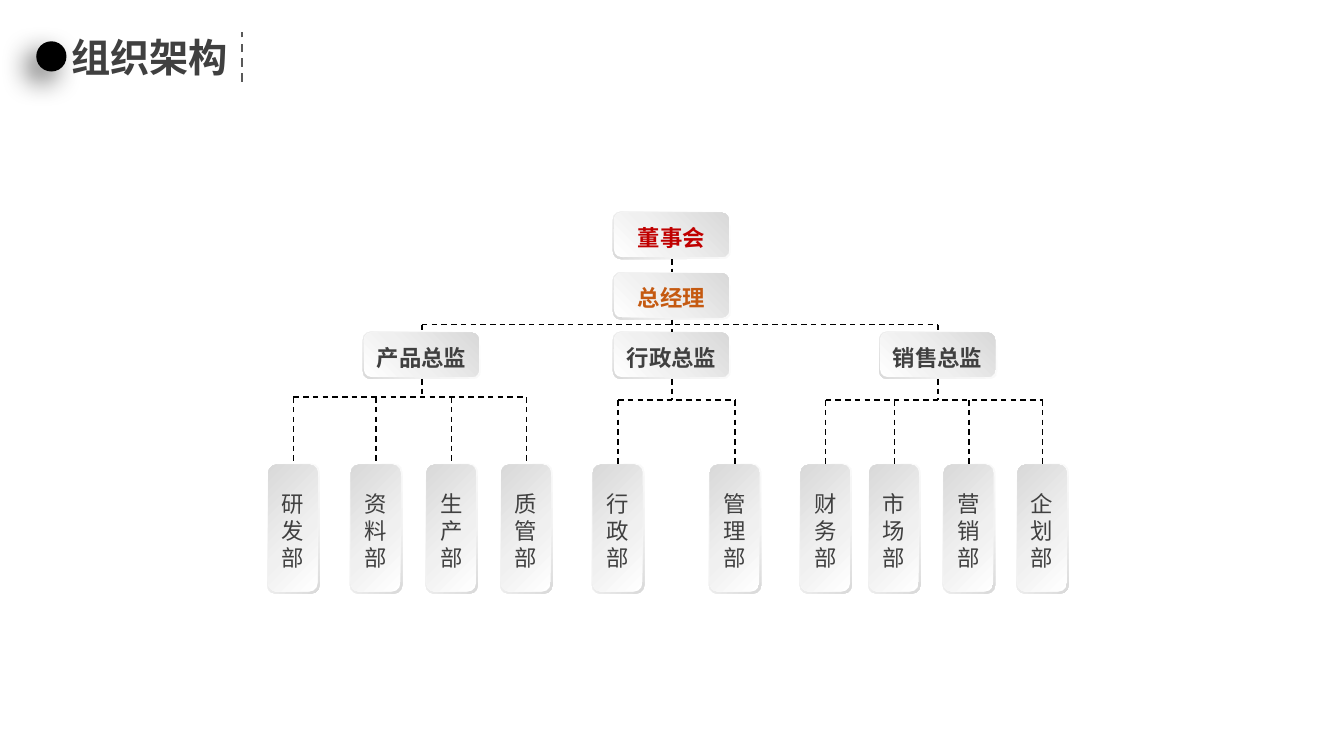
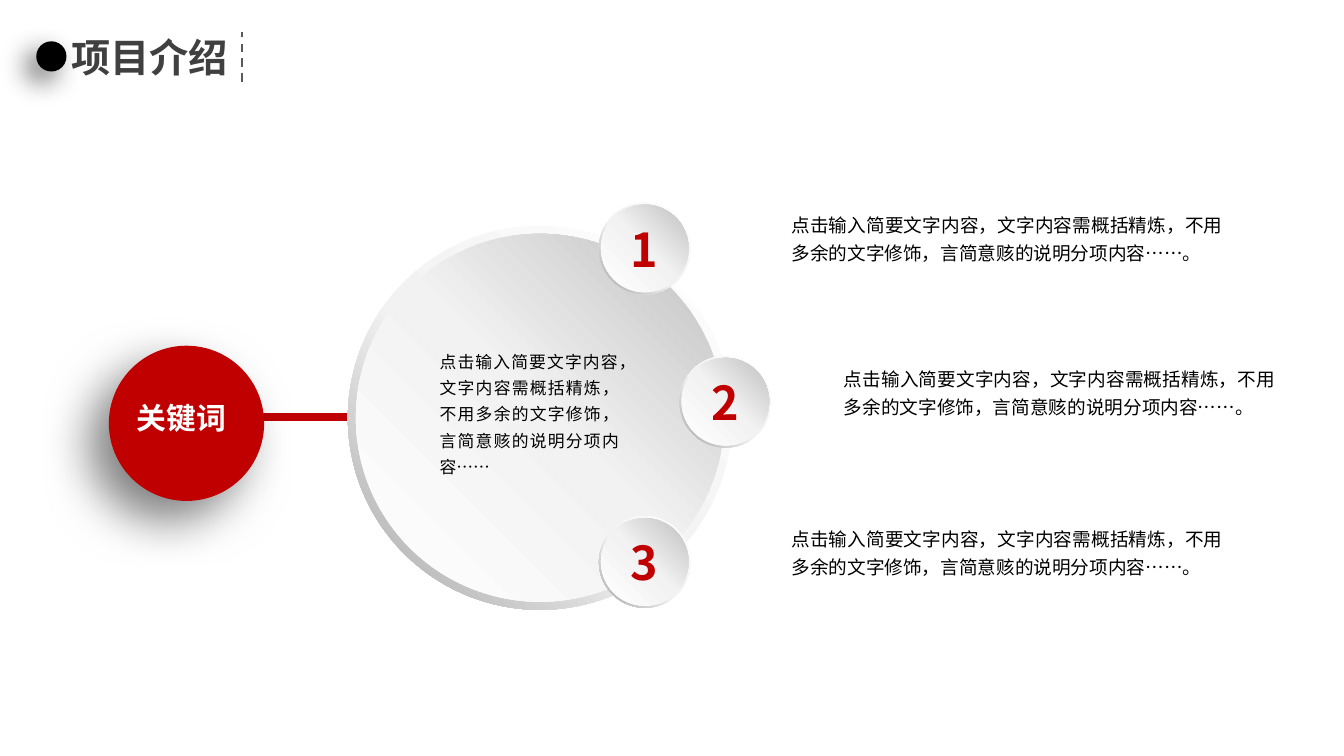
from lxml.etree import SubElement
from pptx import Presentation
from pptx.dml.color import RGBColor
from pptx.enum.dml import MSO_LINE
from pptx.enum.shapes import MSO_CONNECTOR, MSO_SHAPE
from pptx.enum.text import MSO_ANCHOR, PP_ALIGN
from pptx.oxml.ns import qn
from pptx.util import Inches, Pt

FONT = "Noto Sans CJK SC"
RED, ORANGE, DARK, GREY = "C00000", "C55A11", "404040", "595959"
BLACK, WHITE = "000000", "FFFFFF"
CARD_RIM = [(0, WHITE), (62, "F2F2F2"), (100, "D9D9D9")]
CARD_FACE = [(0, WHITE), (42, "F0F0F0"), (100, "D9D9D9")]
DISC_RIM = [(0, WHITE), (55, "F2F2F2"), (100, "A6A6A6")]
DISC_FACE = [(0, WHITE), (51, "F2F2F2"), (100, "BFBFBF")]

WIDE_W, WIDE_H = 1.17, 0.47
TALL_W, TALL_H = 0.52, 1.29
DEPT_Y = 4.6
CHIEF_X = 6.08
CHIEFS = [("董事会", 2.1, RED), ("总经理", 2.7, ORANGE)]
DIRECTOR_Y, SPLIT_Y = 3.29, 3.22
BRANCHES = [
    ("产品总监", 3.6, 3.94,
     [("研发部", 2.65), ("资料部", 3.47), ("生产部", 4.22), ("质管部", 4.96)]),
    ("行政总监", CHIEF_X, 3.97, [("行政部", 5.87), ("管理部", 7.03)]),
    ("销售总监", 8.72, 3.97,
     [("财务部", 7.93), ("市场部", 8.61), ("营销部", 9.35), ("企划部", 10.08)]),
]
SUMMARY = "点击输入简要文字内容，文字内容需概括精炼，不用多余的文字修饰，言简意赅的说明分项内容……"
POINTS = [("1", 5.94, 2.01, 7.85), ("2", 6.74, 3.53, 8.37), ("3", 5.94, 5.12, 7.85)]


def rgb(value):
    """Turn a hex string into a colour."""
    return RGBColor.from_string(value)


def write(sp, text, size=16, color=DARK, bold=False, align=PP_ALIGN.CENTER,
          anchor=MSO_ANCHOR.MIDDLE, spacing=None, margins=(0, 0, 0, 0), wrap=True):
    """Write one formatted paragraph into a shape."""
    tf = sp.text_frame
    tf.word_wrap = wrap
    tf.vertical_anchor = anchor
    tf.margin_left, tf.margin_top, tf.margin_right, tf.margin_bottom = map(Inches, margins)
    p = tf.paragraphs[0]
    p.alignment = align
    if spacing:
        p.line_spacing = spacing
    r = p.add_run()
    r.text = text
    r.font.name = FONT
    r.font.size = Pt(size)
    r.font.bold = bold
    r.font.color.rgb = rgb(color)
    SubElement(r.font._element, qn("a:ea"), typeface=FONT)


def text_box(s, x, y, w, h, text, **fmt):
    """Add a text box anchored at the top."""
    tb = s.shapes.add_textbox(Inches(x), Inches(y), Inches(w), Inches(h))
    write(tb, text, anchor=MSO_ANCHOR.TOP, **fmt)


def shape(s, kind, x, y, w, h, fill, angle=0):
    """Add an unlined shape filled with a hex colour or a list of gradient stops."""
    sp = s.shapes.add_shape(kind, Inches(x), Inches(y), Inches(w), Inches(h))
    sp.line.fill.background()
    sp.shadow.inherit = False
    if isinstance(fill, str):
        sp.fill.solid()
        sp.fill.fore_color.rgb = rgb(fill)
        return sp
    sp.fill.gradient()
    sp.fill.gradient_angle = 360 - angle
    stops = sp._element.spPr.find(qn("a:gradFill")).find(qn("a:gsLst"))
    for old in list(stops):
        stops.remove(old)
    for pos, color in fill:
        gs = SubElement(stops, qn("a:gs"), pos=str(pos * 1000))
        SubElement(gs, qn("a:srgbClr"), val=color)
    return sp


def cast_shadow(sp, alpha, blur, dist):
    """Give a shape a black shadow towards the lower left."""
    effects = sp._element.spPr.find(qn("a:effectLst"))
    shadow = SubElement(effects, qn("a:outerShdw"), blurRad=str(Pt(blur)),
                        dist=str(Pt(dist)), dir=str(135 * 60000), algn="tr", rotWithShape="0")
    color = SubElement(shadow, qn("a:srgbClr"), val=BLACK)
    SubElement(color, qn("a:alpha"), val=str(alpha * 1000))


def line(s, x1, y1, x2, y2, color=BLACK, width=1, dash=True, begin=None, end=None):
    """Draw a straight line, from a shape's bottom and to a shape's top if given."""
    c = s.shapes.add_connector(MSO_CONNECTOR.STRAIGHT, *map(Inches, (x1, y1, x2, y2)))
    c.line.color.rgb = rgb(color)
    c.line.width = Pt(width)
    if dash:
        c.line.dash_style = MSO_LINE.DASH
    SubElement(c._element.spPr, qn("a:effectLst"))
    if begin is not None:
        c.begin_connect(begin, 2)
    if end is not None:
        c.end_connect(end, 0)


def title(s, text):
    """Draw the slide heading with its dot and dashed divider."""
    text_box(s, 0.61, 0.28, 1.77, 0.57, text, size=28, bold=True,
             align=PP_ALIGN.LEFT, margins=(0.1, 0.05, 0.1, 0.05), wrap=False)
    line(s, 2.4, 0.81, 2.4, 0.32, color=GREY, width=1.5)
    cast_shadow(shape(s, MSO_SHAPE.OVAL, 0.36, 0.41, 0.3, 0.3, BLACK), 60, 20, 10)


def card(s, x, y, w, h, text, turn=0, **fmt):
    """Draw a raised rounded card with a label and return its rim."""
    rim = shape(s, MSO_SHAPE.ROUNDED_RECTANGLE, x, y, w, h, CARD_RIM, 135 - turn)
    face = shape(s, MSO_SHAPE.ROUNDED_RECTANGLE, x + 0.01, y + 0.01, w - 0.03, h - 0.03,
                 CARD_FACE, 315 - turn)
    write(face, text, margins=(0.02, 0.05, 0.02, 0), **fmt)
    return rim


def branch(s, name, x, bar_y, depts):
    """Draw a director's card with its departments and return the card."""
    director = card(s, x, DIRECTOR_Y, WIDE_W, WIDE_H, name, bold=True)
    mid = x + WIDE_W / 2
    line(s, mid, DIRECTOR_Y + WIDE_H, mid, bar_y, begin=director)
    centres = [dx + TALL_W / 2 for _, dx in depts]
    line(s, centres[0], bar_y, centres[-1], bar_y)
    for (dept, dx), cx in zip(depts, centres):
        dept_card = card(s, dx, DEPT_Y, TALL_W, TALL_H, dept, turn=90)
        line(s, cx, bar_y, cx, DEPT_Y, end=dept_card)
    return director


def org_slide(prs):
    """Build the organisation chart slide."""
    s = prs.slides.add_slide(prs.slide_layouts[6])
    title(s, "组织架构")
    mids = [x + WIDE_W / 2 for _, x, _, _ in BRANCHES]
    line(s, mids[0], SPLIT_Y, mids[-1], SPLIT_Y)
    board, manager = [card(s, CHIEF_X, y, WIDE_W, WIDE_H, name, color=color, bold=True)
                      for name, y, color in CHIEFS]
    chief_mid = CHIEF_X + WIDE_W / 2
    line(s, chief_mid, CHIEFS[0][1] + WIDE_H, chief_mid, CHIEFS[1][1],
         begin=board, end=manager)
    for item, mid in zip(BRANCHES, mids):
        director = branch(s, *item)
        above = manager if item[1] == CHIEF_X else None
        line(s, mid, SPLIT_Y, mid, DIRECTOR_Y, begin=above, end=director)


def disc(s, x, y, size, rim):
    """Draw a raised disc with a rim and return its face."""
    ring = shape(s, MSO_SHAPE.DONUT, x, y, size, size, DISC_RIM, 135)
    ring.adjustments[0] = 0.049
    return shape(s, MSO_SHAPE.OVAL, x + rim, y + rim, size - 2 * rim, size - 2 * rim,
                 DISC_FACE, 315)


def point(s, number, x, y, text_x):
    """Draw a numbered disc and the text beside it."""
    write(disc(s, x, y, 0.91, 0.02), number, size=33.3, color=RED, bold=True)
    text_box(s, text_x, y + 0.06, 4.28, 0.56, SUMMARY + "。", size=13.3, color=BLACK,
             align=PP_ALIGN.JUSTIFY, spacing=Pt(20))


def project_slide(prs):
    """Build the project introduction slide."""
    s = prs.slides.add_slide(prs.slide_layouts[6])
    title(s, "项目介绍")
    line(s, 1.94, 4.14, 4.1, 4.14, color=RED, width=6, dash=False)
    keyword = shape(s, MSO_SHAPE.OVAL, 1.08, 3.43, 1.54, 1.54, RED)
    cast_shadow(keyword, 50, 35, 20)
    write(keyword, "关键词", size=21.3, color=WHITE, bold=True,
          margins=(0, 0, 0.1, 0.12), wrap=False)
    disc(s, 3.45, 2.24, 3.81, 0.08)
    text_box(s, 4.36, 3.43, 1.78, 1.31, SUMMARY, size=12, color=BLACK,
             align=PP_ALIGN.JUSTIFY, spacing=1.3)
    for item in POINTS:
        point(s, *item)


def main():
    """Build and save the presentation."""
    prs = Presentation()
    prs.slide_width, prs.slide_height = Inches(13.33), Inches(7.5)
    org_slide(prs)
    project_slide(prs)
    prs.save("out.pptx")


if __name__ == "__main__":
    main()
